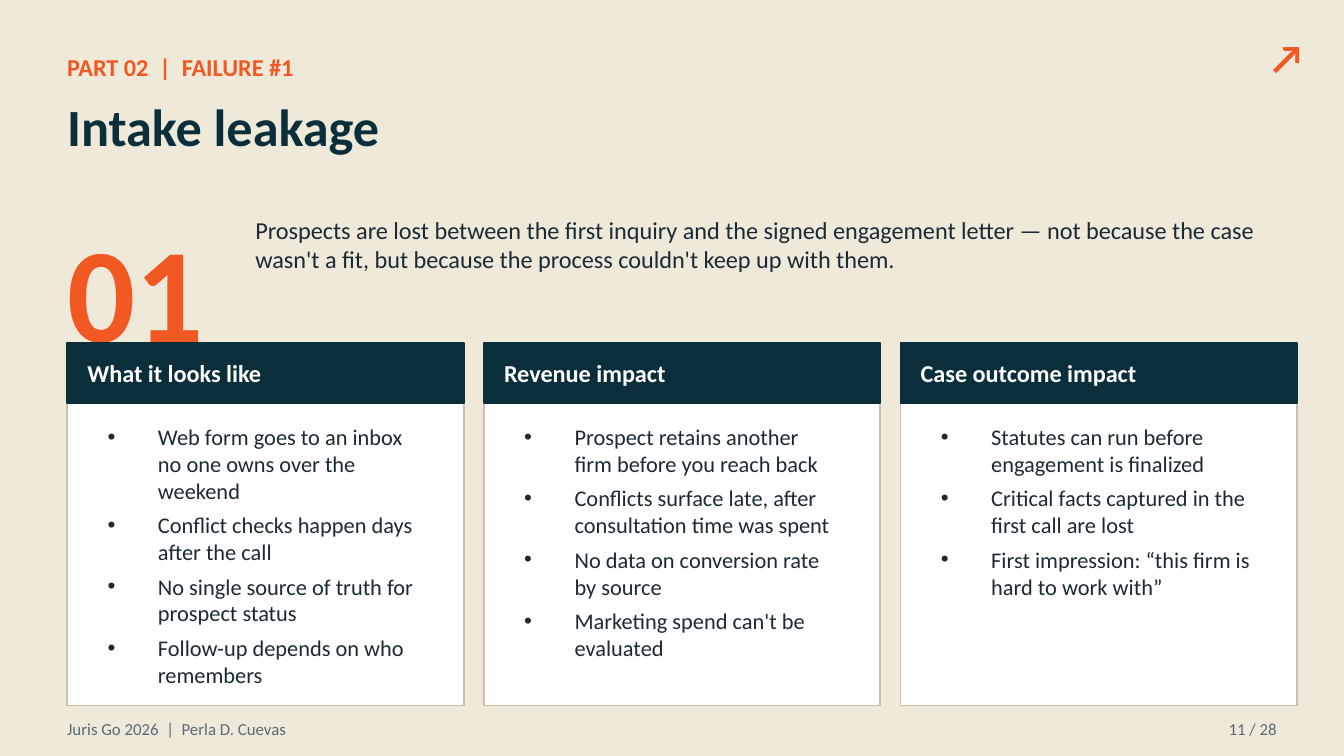
"""Build the intake leakage slide with three cards of findings."""
from dataclasses import dataclass

from lxml.etree import SubElement
from pptx import Presentation
from pptx.dml.color import RGBColor
from pptx.enum.shapes import MSO_SHAPE
from pptx.enum.text import MSO_ANCHOR, MSO_AUTO_SIZE, PP_ALIGN
from pptx.oxml.ns import qn
from pptx.util import Inches, Pt

COLORS = {
    "sand": "EFE9DA",
    "orange": "F25822",
    "navy": "0A2F3A",
    "ink": "1B2A33",
    "white": "FFFFFF",
    "border": "C9C0AB",
    "gray": "5C6B73",
}
SLIDE_W = 10
SLIDE_H = SLIDE_W * 9 / 16
CARD_LEFT, CARD_TOP, CARD_W, CARD_H = 0.5, 2.55, 2.95, 2.7
HEAD_H, GAP = 0.45, 0.15


@dataclass
class Style:
    size: float
    color: str
    bold: bool = False
    align: PP_ALIGN = PP_ALIGN.LEFT
    anchor: MSO_ANCHOR = MSO_ANCHOR.TOP
    bullets: bool = False


@dataclass
class Label:
    text: str
    box: tuple
    style: Style


@dataclass
class Card:
    heading: str
    points: list


MID = MSO_ANCHOR.MIDDLE
TITLE = Style(28, "navy", True)
LEAD = Style(13, "ink")
HEADING = Style(13, "white", True, anchor=MID)
POINTS = Style(12, "ink", bullets=True)
LABELS = [
    Label("↗", (9.3, 0.15, 0.55, 0.55), Style(22, "orange", True, PP_ALIGN.CENTER, MID)),
    Label("PART 02  |  FAILURE #1", (0.5, 0.35, 6, 0.3), Style(13, "orange", True, anchor=MID)),
    Label("01", (0.5, 1.55, 1.4, 0.9), Style(72, "orange", True)),
    Label("Juris Go 2026  |  Perla D. Cuevas", (0.5, 5.3, 6, 0.25), Style(9, "gray", anchor=MID)),
    Label("11 / 28", (8.6, 5.3, 0.9, 0.25), Style(9, "gray", align=PP_ALIGN.RIGHT, anchor=MID)),
]
CARDS = [
    Card("What it looks like", [
        "Web form goes to an inbox no one owns over the weekend",
        "Conflict checks happen days after the call",
        "No single source of truth for prospect status",
        "Follow-up depends on who remembers",
    ]),
    Card("Revenue impact", [
        "Prospect retains another firm before you reach back",
        "Conflicts surface late, after consultation time was spent",
        "No data on conversion rate by source",
        "Marketing spend can't be evaluated",
    ]),
    Card("Case outcome impact", [
        "Statutes can run before engagement is finalized",
        "Critical facts captured in the first call are lost",
        "First impression: “this firm is hard to work with”",
    ]),
]


def rgb(name: str) -> RGBColor:
    """Return the named colour."""
    return RGBColor.from_string(COLORS[name])


def apply(target, formats: dict) -> None:
    """Set each attribute in formats on the target."""
    for name, value in formats.items():
        setattr(target, name, value)


def add_bullet(p, color: str) -> None:
    """Give a paragraph a hanging round bullet."""
    pPr = p._p.get_or_add_pPr()
    pPr.set("marL", str(Pt(27)))
    pPr.set("indent", str(-Pt(27)))
    clr = SubElement(pPr, qn("a:buClr"))
    SubElement(clr, qn("a:srgbClr"), val=COLORS[color])
    SubElement(pPr, qn("a:buChar"), char="•")


def write(sp, box: tuple, lines: list, style: Style) -> None:
    """Place a text shape and fill it with styled paragraphs."""
    apply(sp, dict(zip(("left", "top", "width", "height"), map(Inches, box))))
    side, end = (Inches(0.1), Inches(0.05)) if style.bullets else (0, 0)
    tf = sp.text_frame
    apply(tf, {
        "word_wrap": True, "auto_size": MSO_AUTO_SIZE.NONE, "vertical_anchor": style.anchor,
        "margin_left": side, "margin_right": side, "margin_top": end, "margin_bottom": end,
    })
    for i, line in enumerate(lines):
        p = tf.add_paragraph() if i else tf.paragraphs[0]
        apply(p, {"alignment": style.align, "space_before": Pt(4 if i else 0)})
        if style.bullets:
            add_bullet(p, style.color)
        r = p.add_run()
        r.text = line
        apply(r.font, {"name": "Calibri", "size": Pt(style.size), "bold": style.bold})
        r.font.color.rgb = rgb(style.color)


def add_text(s, label: Label) -> None:
    """Add a text box for a label."""
    sp = s.shapes.add_textbox(*map(Inches, label.box))
    write(sp, label.box, [label.text], label.style)


def add_rect(s, box: tuple, fill: str, line: str) -> None:
    """Add a filled and outlined rectangle."""
    sp = s.shapes.add_shape(MSO_SHAPE.RECTANGLE, *map(Inches, box))
    sp.shadow.inherit = False
    sp.fill.solid()
    sp.fill.fore_color.rgb = rgb(fill)
    sp.line.color.rgb = rgb(line)
    sp.line.width = Pt(1)


def add_card(s, card: Card, left: float, body) -> None:
    """Draw a card and bring its list placeholder in front of it."""
    add_rect(s, (left, CARD_TOP, CARD_W, CARD_H), "white", "border")
    add_rect(s, (left, CARD_TOP, CARD_W, HEAD_H), "navy", "navy")
    add_text(s, Label(card.heading, (left + 0.15, CARD_TOP, CARD_W - 0.3, HEAD_H), HEADING))
    write(body, (left + 0.2, CARD_TOP + 0.55, CARD_W - 0.4, CARD_H - 0.65), card.points, POINTS)
    body.element.getparent().append(body.element)


def main() -> None:
    """Build and save the slide."""
    prs = Presentation()
    apply(prs, {"slide_width": Inches(SLIDE_W), "slide_height": Inches(SLIDE_H)})
    s = prs.slides.add_slide(prs.slide_layouts.get_by_name("Comparison"))
    s.background.fill.solid()
    s.background.fill.fore_color.rgb = rgb("sand")
    title, lead, *bodies = s.placeholders
    write(title, (0.5, 0.7, 9, 0.9), ["Intake leakage"], TITLE)
    write(lead, (1.9, 1.6, 7.6, 0.95), [
        "Prospects are lost between the first inquiry and the signed engagement letter — "
        "not because the case wasn't a fit, but because the process couldn't keep up with them."
    ], LEAD)
    for label in LABELS:
        add_text(s, label)
    for i, (card, body) in enumerate(zip(CARDS, bodies)):
        add_card(s, card, CARD_LEFT + i * (CARD_W + GAP), body)
    prs.save("out.pptx")


if __name__ == "__main__":
    main()
